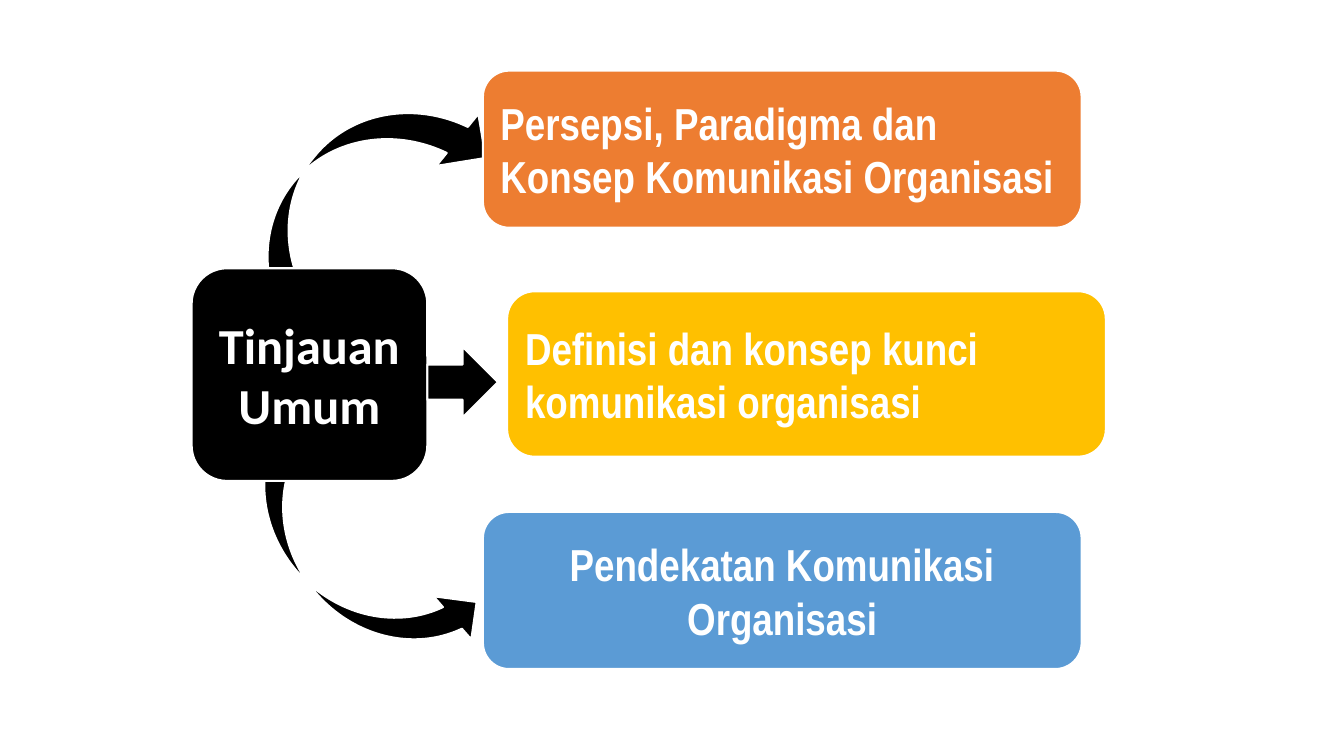
from dataclasses import dataclass

from pptx import Presentation
from pptx.dml.color import RGBColor
from pptx.enum.shapes import MSO_SHAPE
from pptx.enum.text import MSO_ANCHOR, PP_ALIGN
from pptx.oxml.ns import qn
from pptx.shapes.autoshape import Shape
from pptx.slide import Slide
from pptx.util import Cm, Pt

COLORS = {
    "black": "000000",
    "white": "FFFFFF",
    "orange": "ED7D31",
    "yellow": "FFC000",
    "blue": "5B9BD5",
}


@dataclass(frozen=True)
class Box:
    """Position and size in centimetres."""
    left: float
    top: float
    width: float
    height: float


@dataclass(frozen=True)
class Arrow:
    kind: MSO_SHAPE
    box: Box
    rotation: float = 0
    flipped: bool = False


@dataclass(frozen=True)
class Topic:
    text: str
    box: Box
    color: str
    align: PP_ALIGN = PP_ALIGN.LEFT
    font: str = "Arial Narrow"
    size: int = 32


TOPIC_WIDTH = 15.09

CURVED_ARROWS = [
    Arrow(MSO_SHAPE.CURVED_DOWN_ARROW, Box(5.23, 12.42, 7.44, 2.9), 48.8, flipped=True),
    Arrow(MSO_SHAPE.CURVED_DOWN_ARROW, Box(5.36, 3.48, 7.49, 3.38), 309),
]
STRAIGHT_ARROW = Arrow(MSO_SHAPE.RIGHT_ARROW, Box(10.77, 8.74, 1.78, 1.78))

TOPICS = [
    Topic("Tinjauan Umum", Box(4.83, 6.76, 5.94, 5.36), "black",
          PP_ALIGN.CENTER, "Calibri", 36),
    Topic("Persepsi, Paradigma dan Konsep Komunikasi Organisasi",
          Box(12.17, 1.78, TOPIC_WIDTH, 3.96), "orange"),
    Topic("Definisi dan konsep kunci komunikasi organisasi",
          Box(12.78, 7.34, TOPIC_WIDTH, 4.17), "yellow"),
    Topic("Pendekatan Komunikasi Organisasi",
          Box(12.17, 12.9, TOPIC_WIDTH, 3.96), "blue", PP_ALIGN.CENTER),
]


def rgb(color: str) -> RGBColor:
    return RGBColor.from_string(COLORS[color])


def add_outlined_shape(slide: Slide, kind: MSO_SHAPE, box: Box, color: str) -> Shape:
    shape = slide.shapes.add_shape(
        kind, Cm(box.left), Cm(box.top), Cm(box.width), Cm(box.height))
    shape.shadow.inherit = False
    shape.fill.solid()
    shape.fill.fore_color.rgb = rgb(color)
    shape.line.color.rgb = rgb("white")
    shape.line.width = Pt(1.5)
    return shape


def add_arrow(slide: Slide, arrow: Arrow) -> None:
    shape = add_outlined_shape(slide, arrow.kind, arrow.box, "black")
    shape.rotation = arrow.rotation
    if arrow.flipped:
        shape.element.spPr.find(qn("a:xfrm")).set("flipV", "1")


def add_topic(slide: Slide, topic: Topic) -> None:
    shape = add_outlined_shape(slide, MSO_SHAPE.ROUNDED_RECTANGLE, topic.box, topic.color)
    frame = shape.text_frame
    frame.word_wrap = True
    frame.vertical_anchor = MSO_ANCHOR.MIDDLE
    paragraph = frame.paragraphs[0]
    paragraph.text = topic.text
    paragraph.alignment = topic.align
    paragraph.font.name = topic.font
    paragraph.font.size = Pt(topic.size)
    paragraph.font.bold = True
    paragraph.font.color.rgb = rgb("white")


def main() -> None:
    presentation = Presentation()
    presentation.slide_width = Cm(33.87)
    presentation.slide_height = Cm(19.05)
    slide = presentation.slides.add_slide(presentation.slide_layouts[6])

    for arrow in CURVED_ARROWS:
        add_arrow(slide, arrow)
    for topic in TOPICS:
        add_topic(slide, topic)
    add_arrow(slide, STRAIGHT_ARROW)

    presentation.save("out.pptx")


if __name__ == "__main__":
    main()
